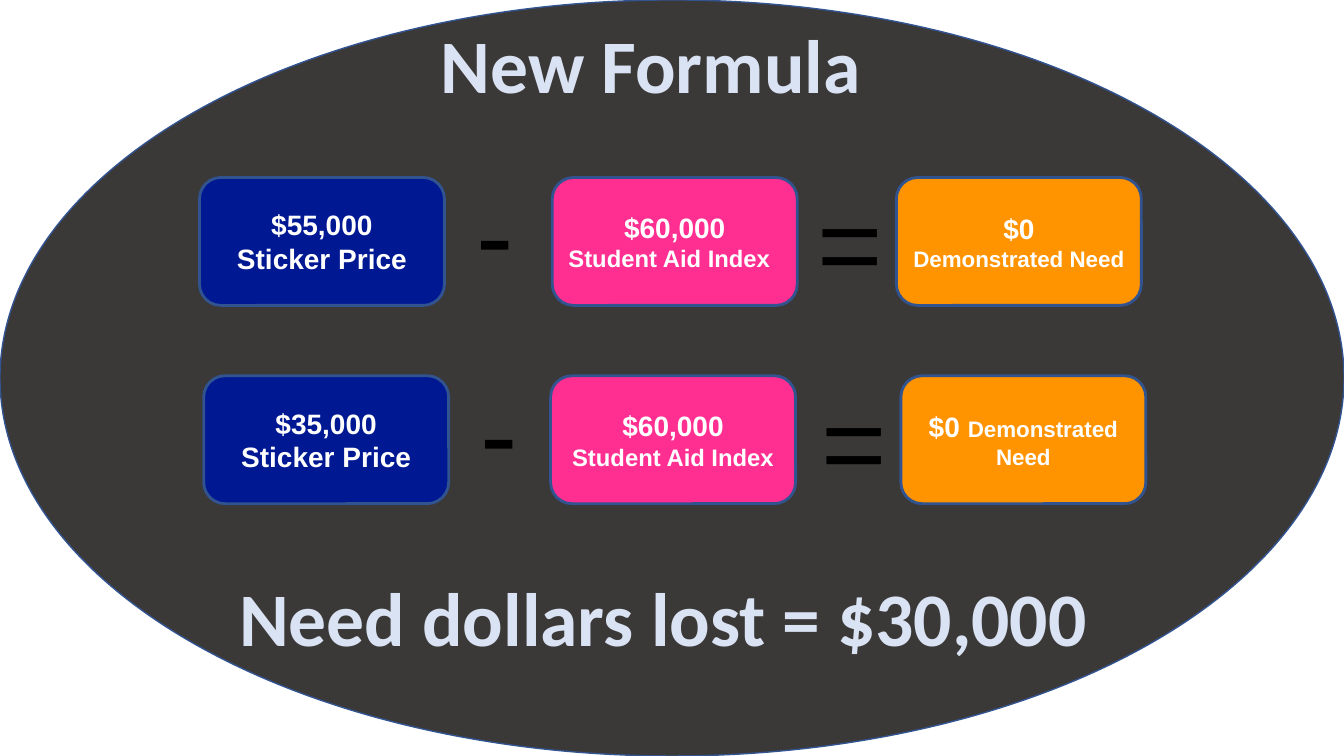
from dataclasses import dataclass

from pptx import Presentation
from pptx import util as u
from pptx.dml.color import RGBColor
from pptx.enum import shapes, text

Pt = u.Pt
LEFT, CENTER = text.PP_ALIGN.LEFT, text.PP_ALIGN.CENTER
TOP, MIDDLE = text.MSO_ANCHOR.TOP, text.MSO_ANCHOR.MIDDLE


@dataclass(frozen=True)
class Theme:
    heading_font: str = "Calibri"
    body_font: str = "Arial"
    oval: str = "3B3838"
    oval_edge: str = "325491"
    box_edge: str = "31538F"
    price: str = "011893"
    aid: str = "FF2F92"
    need: str = "FF9300"
    heading: str = "DAE3F3"
    label: str = "FFFFFF"
    sign: str = "000000"
    heading_size: int = 54
    sign_size: int = 80
    amount_size: int = 20
    aid_size: int = 17
    need_size: int = 16


class FormulaSlide:
    def __init__(self, deck, theme):
        self.theme = theme
        self.slide = deck.slides.add_slide(deck.slide_layouts[5])

    def set_lines(self, frame, lines, font, color, bold=True, anchor=TOP, wrap=True):
        """Each line is (alignment, [(words, size), ...])."""
        frame.word_wrap = wrap
        frame.auto_size = text.MSO_AUTO_SIZE.NONE
        frame.vertical_anchor = anchor
        frame.margin_left = frame.margin_right = Pt(7.2)
        frame.margin_top = frame.margin_bottom = Pt(3.6)
        for index, (alignment, runs) in enumerate(lines):
            paragraph = frame.paragraphs[0] if index == 0 else frame.add_paragraph()
            paragraph.alignment = alignment
            for words, size in runs:
                run = paragraph.add_run()
                run.text = words
                run.font.name = font
                run.font.size = Pt(size)
                run.font.bold = bold
                run.font.color.rgb = RGBColor.from_string(color)

    def panel(self, kind, left, top, width, height, fill, edge, edge_width):
        panel = self.slide.shapes.add_shape(
            kind, Pt(left), Pt(top), Pt(width), Pt(height))
        panel.shadow.inherit = False
        panel.fill.solid()
        panel.fill.fore_color.rgb = RGBColor.from_string(fill)
        panel.line.color.rgb = RGBColor.from_string(edge)
        panel.line.width = Pt(edge_width)
        return panel

    def term(self, left, top, fill, lines):
        box = self.panel(shapes.MSO_SHAPE.ROUNDED_RECTANGLE, left, top, 175, 91.4,
                         fill, self.theme.box_edge, 2)
        self.set_lines(box.text_frame, lines, self.theme.body_font, self.theme.label,
                       anchor=MIDDLE)

    def sign(self, symbol, left, top, width):
        box = self.slide.shapes.add_textbox(Pt(left), Pt(top), Pt(width), Pt(104.4))
        self.set_lines(box.text_frame, [(LEFT, [(symbol, self.theme.sign_size)])],
                       self.theme.body_font, self.theme.sign, bold=False)

    def heading(self, holder, words):
        self.set_lines(holder.text_frame,
                       [(CENTER, [(words, self.theme.heading_size)])],
                       self.theme.heading_font, self.theme.heading, wrap=False)

    def title(self, words, left, top, width, height):
        title = self.slide.shapes.title
        title.left, title.top = Pt(left), Pt(top)
        title.width, title.height = Pt(width), Pt(height)
        self.heading(title, words)
        # Bring the title in front of the oval
        self.slide.shapes._spTree.append(title._element)

    def conclusion(self, words, left, top, width, height):
        self.heading(self.slide.shapes.add_textbox(
            Pt(left), Pt(top), Pt(width), Pt(height)), words)


def main():
    theme = Theme()
    deck = Presentation()
    deck.slide_width, deck.slide_height = Pt(960), Pt(540)
    page = FormulaSlide(deck, theme)

    # Background oval
    page.panel(shapes.MSO_SHAPE.OVAL, 0, 0, 960, 540, theme.oval, theme.oval_edge, 1)

    # Formula rows: top, box lefts, price, alignment of the aid label, need lines
    amount = theme.amount_size
    need_on_two_lines = [(CENTER, [("$0", amount)]),
                         (CENTER, [("Demonstrated Need", theme.need_size)])]
    need_in_one_flow = [(CENTER, [("$0 ", amount),
                                  ("Demonstrated Need", theme.need_size)])]
    rows = [
        (126.8, (142.5, 394.5, 640.3), "$55,000", LEFT, need_on_two_lines),
        (268.4, (145.5, 393.3, 643.5), "$35,000", CENTER, need_in_one_flow),
    ]
    for top, (price_left, aid_left, need_left), price, aid_alignment, need in rows:
        page.term(price_left, top, theme.price,
                  [(CENTER, [(price, amount)]), (CENTER, [("Sticker Price", amount)])])
        page.sign("-", price_left + 190.8, top - 13.3, 41.8)
        page.term(aid_left, top, theme.aid,
                  [(CENTER, [("$60,000", amount)]),
                   (aid_alignment, [("Student Aid Index", theme.aid_size)])])
        page.sign("=", need_left - 63.8, top - 6.8, 62)
        page.term(need_left, top, theme.need, need)

    # Headings
    page.title("New Formula", 306, 9.4, 317.5, 72.7)
    page.conclusion("Need dollars lost = $30,000", 154.5, 404.6, 638.6, 72.7)

    deck.save("out.pptx")


if __name__ == "__main__":
    main()
